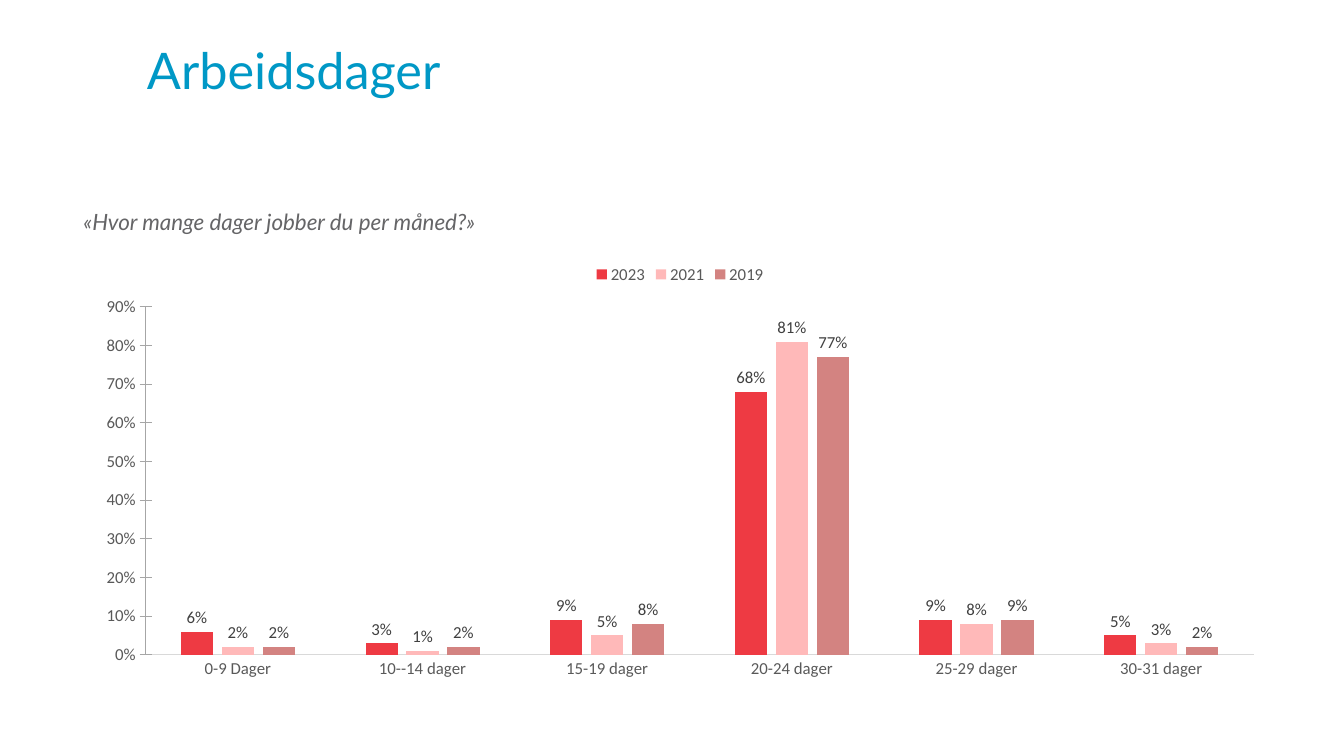
from dataclasses import dataclass

from pptx import Presentation
from pptx.chart.data import CategoryChartData
from pptx.dml.color import RGBColor
from pptx.enum.chart import (XL_CHART_TYPE, XL_LABEL_POSITION,
                             XL_LEGEND_POSITION, XL_TICK_MARK)
from pptx.enum.text import MSO_ANCHOR
from pptx.util import Inches, Pt

COLUMNS = XL_CHART_TYPE.COLUMN_CLUSTERED
OUTSIDE_END = XL_LABEL_POSITION.OUTSIDE_END
LEGEND_TOP = XL_LEGEND_POSITION.TOP
TICK_NONE, TICK_CROSS = XL_TICK_MARK.NONE, XL_TICK_MARK.CROSS
MIDDLE, BOTTOM = MSO_ANCHOR.MIDDLE, MSO_ANCHOR.BOTTOM


@dataclass(frozen=True)
class Theme:
    text_font: str = "Lato"
    chart_font: str = "Calibri"
    title_size: int = 36
    question_size: int = 16
    chart_size: int = 12
    white: str = "FFFFFF"
    title: str = "0098C6"
    question: str = "656567"
    axis_text: str = "595959"
    label_text: str = "404040"
    category_line: str = "D9D9D9"
    value_line: str = "A6A6A6"
    series: tuple = ("EE3A43", "FFB9B9", "D38381")


CATEGORIES = ["0-9 Dager", "10--14 dager", "15-19 dager",
              "20-24 dager", "25-29 dager", "30-31 dager"]
SHARES = {
    "2023": [0.06, 0.03, 0.09, 0.68, 0.09, 0.05],
    "2021": [0.02, 0.01, 0.05, 0.81, 0.08, 0.03],
    "2019": [0.02, 0.02, 0.08, 0.77, 0.09, 0.02],
}


class SlideBuilder:
    def __init__(self, slide, theme):
        self.s = slide
        self.theme = theme

    def style_font(self, font, name, size, color, **extra):
        for key, value in {"name": name, "size": Pt(size), **extra}.items():
            setattr(font, key, value)
        font.color.rgb = RGBColor.from_string(color)

    def text(self, box, text, size, color, anchor, fill=None, **extra):
        sp = self.s.shapes.add_textbox(*map(Inches, box))
        if fill:
            sp.fill.solid()
            sp.fill.fore_color.rgb = RGBColor.from_string(fill)
        tf = sp.text_frame
        tf.word_wrap = True
        tf.vertical_anchor = anchor
        r = tf.paragraphs[0].add_run()
        r.text = text
        self.style_font(r.font, self.theme.text_font, size, color, **extra)

    def axis(self, axis, tick, line_color):
        formats = {"major_tick_mark": tick, "minor_tick_mark": TICK_NONE,
                   "has_major_gridlines": False}
        for key, value in formats.items():
            setattr(axis, key, value)
        axis.format.line.color.rgb = RGBColor.from_string(line_color)
        axis.format.line.width = Pt(0.75)
        self.style_font(axis.tick_labels.font, self.theme.chart_font,
                        self.theme.chart_size, self.theme.axis_text)

    def column_chart(self, box, categories, shares):
        th = self.theme
        data = CategoryChartData(number_format="0%")
        data.categories = categories
        for year, values in shares.items():
            data.add_series(year, values)
        chart = self.s.shapes.add_chart(COLUMNS, *map(Inches, box), data).chart
        chart.has_title = False
        self.style_font(chart.font, th.chart_font, th.chart_size, th.axis_text)

        # Legend
        chart.has_legend = True
        chart.legend.position = LEGEND_TOP
        chart.legend.include_in_layout = False
        self.style_font(chart.legend.font, th.chart_font, th.chart_size, th.axis_text)

        # Axes
        self.axis(chart.category_axis, TICK_NONE, th.category_line)
        self.axis(chart.value_axis, TICK_CROSS, th.value_line)
        scale = {"minimum_scale": 0, "maximum_scale": 0.9, "major_unit": 0.1}
        for key, value in scale.items():
            setattr(chart.value_axis, key, value)
        chart.value_axis.tick_labels.number_format = "0%"
        chart.value_axis.tick_labels.number_format_is_linked = False

        # Columns and their labels
        plot = chart.plots[0]
        for key, value in {"gap_width": 219, "overlap": -27,
                           "vary_by_categories": False}.items():
            setattr(plot, key, value)
        label_formats = {"show_value": True, "position": OUTSIDE_END,
                         "number_format": "0%", "number_format_is_linked": False}
        for series, color in zip(plot.series, th.series):
            series.format.fill.solid()
            series.format.fill.fore_color.rgb = RGBColor.from_string(color)
            labels = series.data_labels
            for key, value in label_formats.items():
                setattr(labels, key, value)
            self.style_font(labels.font, th.chart_font, th.chart_size, th.label_text)


def main():
    prs = Presentation()
    prs.slide_width, prs.slide_height = Inches(13.33), Inches(7.5)
    theme = Theme()
    slide = SlideBuilder(prs.slides.add_slide(prs.slide_layouts[6]), theme)

    # Heading and survey question
    slide.text((1.36, 0.06, 11.3, 1.25), "Arbeidsdager",
               theme.title_size, theme.title, MIDDLE, fill=theme.white)
    slide.text((0.73, 1.68, 11.94, 0.7), "«Hvor mange dager jobber du per måned?»",
               theme.question_size, theme.question, BOTTOM, italic=True)

    # Working days per month, by year
    slide.column_chart((0.82, 2.51, 11.85, 4.31), CATEGORIES, SHARES)

    prs.save("out.pptx")


if __name__ == "__main__":
    main()
